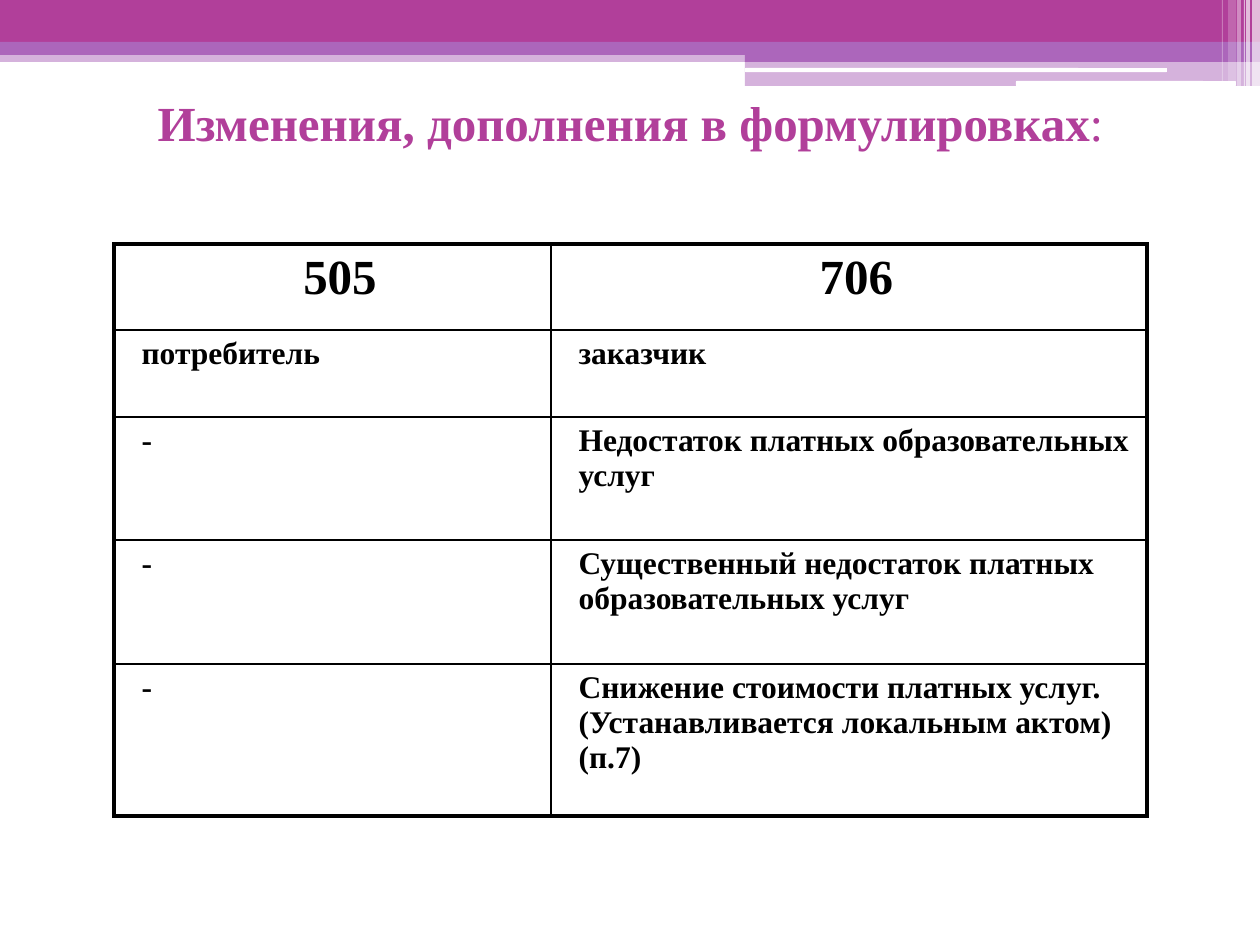
from lxml import etree
from pptx import Presentation
from pptx.dml.color import RGBColor
from pptx.enum.shapes import MSO_SHAPE
from pptx.enum.text import MSO_ANCHOR, PP_ALIGN
from pptx.oxml.ns import qn
from pptx.util import Pt

RECT, ROUNDED = MSO_SHAPE.RECTANGLE, MSO_SHAPE.ROUNDED_RECTANGLE
TOP, CENTER, LEFT = MSO_ANCHOR.TOP, PP_ALIGN.CENTER, PP_ALIGN.LEFT
PX = 914400 / 126
FONT = "Times New Roman"
COLORS = {"magenta": "B13F9A", "violet": "AC66BB", "white": "FFFFFF", "black": "000000"}


def emu(*pixels):
    return [round(value * PX) for value in pixels]


def set_border(cell, side, points):
    """Draw one side (L, R, T or B) of a table cell in black."""
    line = etree.SubElement(cell._tc.get_or_add_tcPr(), qn(f"a:ln{side}"), w=str(Pt(points)))
    fill = etree.SubElement(line, qn("a:solidFill"))
    etree.SubElement(fill, qn("a:srgbClr"), val=COLORS["black"])


prs = Presentation()
prs.slide_width, prs.slide_height = emu(1260, 945)
slide = prs.slides.add_slide(prs.slide_layouts[5])

# Header bands and stripes: preset, left, top, width, height, colour, opacity %
bands = [
    (RECT, 0, 50, 1260, 12, "violet", 50),
    (RECT, 0, 0, 1260, 43, "magenta", 100),
    (RECT, 0, 42, 1260, 13, "violet", 100),
    (RECT, 745, 49, 515, 13, "violet", 100),
    (RECT, 745, 61, 515, 25, "violet", 50),
    (ROUNDED, 745, 68, 422, 4, "white", 100),
    (ROUNDED, 1016, 81, 220, 5, "white", 100),
    (RECT, 1252, 0, 8, 86, "white", 65),
    (RECT, 1246, 0, 4, 86, "white", 65),
    (RECT, 1244, 0, 1, 86, "white", 60),
    (RECT, 1237, 0, 4, 86, "white", 40),
    (RECT, 1228, 0, 8, 81, "white", 20),
    (RECT, 1222, 0, 1, 81, "white", 30),
]
for preset, left, top, width, height, color, opacity in bands:
    band = slide.shapes.add_shape(preset, *emu(left, top, width, height))
    band.shadow.inherit = False
    band.line.fill.background()
    band.fill.solid()
    band.fill.fore_color.rgb = RGBColor.from_string(COLORS[color])
    if opacity < 100:
        tint = band._element.spPr.find(".//" + qn("a:srgbClr"))
        etree.SubElement(tint, qn("a:alpha"), val=str(opacity * 1000))

# Title
title = slide.shapes.title
title.left, title.top, title.width, title.height = emu(64, 38, 1133, 276)
heading = title.text_frame
heading.vertical_anchor = TOP
heading.margin_top, = emu(54)
heading.text = "Изменения, дополнения в формулировках"
line = heading.paragraphs[0]
line.alignment = CENTER
line.add_run().text = ":"
for run, bold in zip(line.runs, (True, False)):
    run.font.name, run.font.size, run.font.bold = FONT, Pt(28), bold
    run.font.color.rgb = RGBColor.from_string(COLORS["magenta"])

# Comparison of the two regulations
wording = [
    ("505", "706"),
    ("потребитель", "заказчик"),
    ("-", "Недостаток платных образовательных услуг"),
    ("-", "Существенный недостаток платных образовательных услуг"),
    ("-", "Снижение стоимости платных услуг. (Устанавливается локальным актом) (п.7)"),
]
column_widths = emu(437, 596)
row_heights = emu(86, 87, 123, 124, 152)
last_row = len(wording) - 1
comparison = slide.shapes.add_table(
    len(wording), 2, *emu(114, 244), sum(column_widths), sum(row_heights)).table
comparison.first_row = comparison.horz_banding = False
for column, width in zip(comparison.columns, column_widths):
    column.width = width
for r, texts in enumerate(wording):
    comparison.rows[r].height = row_heights[r]
    for c, text in enumerate(texts):
        cell = comparison.cell(r, c)
        outer = {"L": c == 0, "R": c == 1, "T": r == 0, "B": r == last_row}
        for side, is_outer in outer.items():
            set_border(cell, side, 2.25 if is_outer else 1)
        cell.fill.background()
        cell.text_frame.text = text
        entry = cell.text_frame.paragraphs[0]
        entry.alignment = CENTER if r == 0 else LEFT
        entry.space_before = Pt(3)
        indent, = emu(15)
        entry._p.get_or_add_pPr().set("marL", str(indent))
        font = entry.runs[0].font
        font.name, font.bold = FONT, True
        font.size = Pt(28 if r == 0 else 18)
        font.color.rgb = RGBColor.from_string(COLORS["black"])

prs.save("out.pptx")
